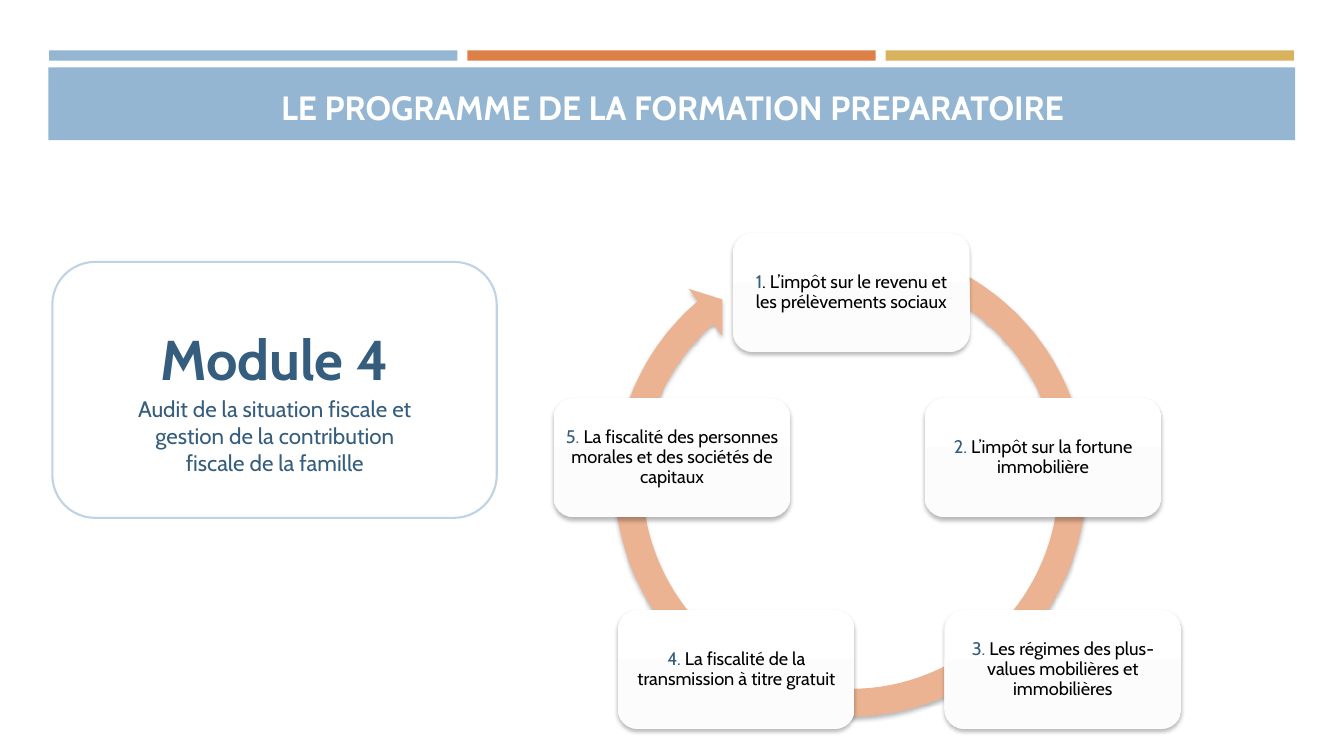
from lxml import etree
from pptx import Presentation
from pptx import util as u
from pptx.dml.color import RGBColor
from pptx.enum import shapes, text
from pptx.oxml import parse_xml
from pptx.oxml.ns import qn

FONT = "Cabin"
COLORS = {
    "blue": "94B6D2", "orange": "DD8047", "gold": "D8B25C",
    "arrow": "EBB391", "outline": "BFD3E4", "navy": "355D7E",
    "white": "FFFFFF", "pearl": "FCFCFC", "black": "000000",
}
CARD_STOPS = [(0, "white"), (41, "pearl"), (100, "white")]
DRAWING_NS = "http://schemas.openxmlformats.org/drawingml/2006/main"


class SlideBuilder:
    def __init__(self, slide):
        self.slide = slide

    def color(self, name):
        return RGBColor.from_string(COLORS[name])

    def shape(self, kind, box, fill, line=None):
        shape = self.slide.shapes.add_shape(kind, *map(u.Cm, box))
        shape.shadow.inherit = False
        shape.fill.solid()
        shape.fill.fore_color.rgb = self.color(fill)
        if line:
            shape.line.color.rgb = self.color(line)
            shape.line.width = u.Pt(1.5)
        else:
            shape.line.fill.background()
        return shape

    def soft_shadow(self, shape):
        effects = shape._element.spPr.find(qn("a:effectLst"))
        effects.append(parse_xml(
            f'<a:outerShdw xmlns:a="{DRAWING_NS}" blurRad="{u.Pt(3)}" dist="{u.Pt(2)}" '
            f'dir="5400000" rotWithShape="0"><a:srgbClr val="{COLORS["black"]}">'
            '<a:alpha val="28000"/></a:srgbClr></a:outerShdw>'))

    def card_gradient(self, shape):
        shape.fill.gradient()
        shape.fill.gradient_angle = 270
        stops = shape._element.spPr.find(qn("a:gradFill")).find(qn("a:gsLst"))
        for stop in list(stops):
            stops.remove(stop)
        for position, name in CARD_STOPS:
            stop = etree.SubElement(stops, qn("a:gs"), pos=str(position * 1000))
            etree.SubElement(stop, qn("a:srgbClr"), val=COLORS[name])

    def add_words(self, shape, parts, size, bold=False, anchor=text.MSO_ANCHOR.MIDDLE):
        """Fill one centred paragraph from (words, colour) parts."""
        frame = shape.text_frame
        frame.word_wrap = True
        frame.vertical_anchor = anchor
        paragraph = frame.paragraphs[0]
        paragraph.alignment = text.PP_ALIGN.CENTER
        for words, color in parts:
            run = paragraph.add_run()
            run.text = words
            run.font.name = FONT
            run.font.size = u.Pt(size)
            run.font.bold = bold
            run.font.color.rgb = self.color(color)
        return paragraph

    def text_box(self, box, words, color, size, bold=False, anchor=text.MSO_ANCHOR.TOP):
        shape = self.slide.shapes.add_textbox(*map(u.Cm, box))
        self.add_words(shape, [(words, color)], size, bold, anchor)

    def cycle_arrow(self, box):
        arrow = self.shape(shapes.MSO_SHAPE.CIRCULAR_ARROW, box, "arrow")
        for index, value in enumerate([0.055, 3.307, 137.549, 173.988, 0.058]):
            arrow.adjustments[index] = value
        self.soft_shadow(arrow)

    def card(self, left, top, number, topic):
        card = self.shape(shapes.MSO_SHAPE.ROUNDED_RECTANGLE, (left, top, 5.97, 3), "white")
        self.card_gradient(card)
        self.soft_shadow(card)
        frame = card.text_frame
        frame.margin_left = frame.margin_right = u.Cm(0.13)
        frame.margin_top = frame.margin_bottom = u.Cm(0.13)
        paragraph = self.add_words(card, [(number, "navy"), (topic, "black")], 13)
        paragraph.line_spacing = 0.9


def main():
    presentation = Presentation()
    presentation.slide_width = u.Cm(33.87)
    presentation.slide_height = u.Cm(19.05)
    builder = SlideBuilder(presentation.slides.add_slide(presentation.slide_layouts[6]))

    # Header bars and title band
    rectangle = shapes.MSO_SHAPE.RECTANGLE
    for column, color in enumerate(["blue", "orange", "gold"]):
        builder.shape(rectangle, (1.24 + column * 10.54, 1.27, 10.29, 0.26), color)
    builder.shape(rectangle, (1.22, 1.7, 31.42, 1.83), "blue")
    builder.text_box((1.63, 2.03, 30.63, 1.3), "LE PROGRAMME DE LA FORMATION PREPARATOIRE",
                     "white", 24, True, text.MSO_ANCHOR.BOTTOM)

    # Cycle of topics
    builder.cycle_arrow((15.11, 5.79, 12.65, 12.65))
    topics = [
        (18.47, 5.87, "1", ". L’impôt sur le revenu et les prélèvements sociaux"),
        (23.3, 10.03, "2. ", "L’impôt sur la fortune immobilière"),
        (23.8, 15.37, "3. ", "Les régimes des plus-values mobilières et immobilières"),
        (15.57, 15.37, "4. ", "La fiscalité de la transmission à titre gratuit"),
        (13.95, 10.03, "5. ", "La fiscalité des personnes morales et des sociétés de capitaux"),
    ]
    for topic in topics:
        builder.card(*topic)

    # Module panel
    panel = builder.shape(shapes.MSO_SHAPE.ROUNDED_RECTANGLE, (1.32, 6.6, 11.2, 6.45),
                          "white", "outline")
    panel.text_frame.margin_bottom = u.Cm(1.75)
    builder.add_words(panel, [("Module 4", "navy")], 40, True)
    builder.text_box((2.95, 9.83, 7.95, 2.31),
                     "Audit de la situation fiscale et gestion de la contribution "
                     "fiscale de la famille", "navy", 16)

    presentation.save("out.pptx")


if __name__ == "__main__":
    main()
